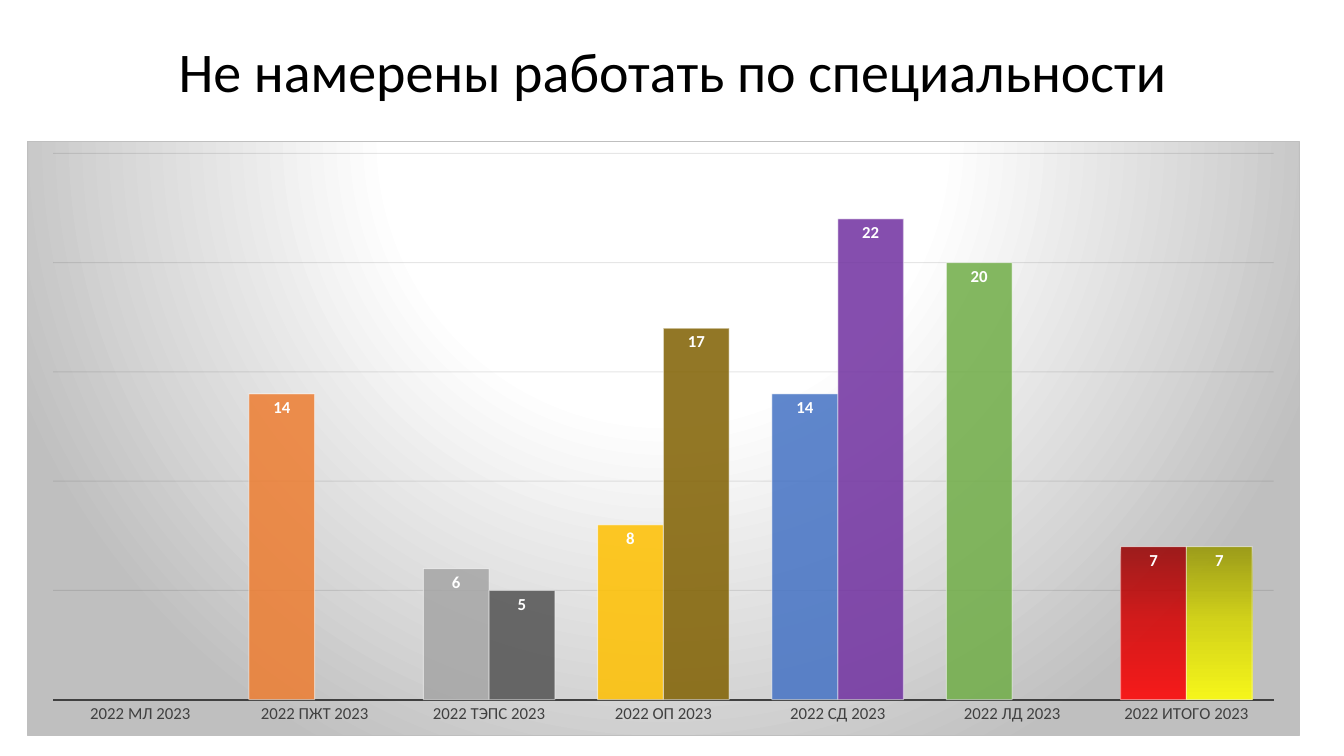
from lxml import etree
from pptx import Presentation
from pptx.chart.data import CategoryChartData
from pptx.dml.color import RGBColor
from pptx.enum.chart import XL_CHART_TYPE, XL_LABEL_POSITION, XL_TICK_LABEL_POSITION, XL_TICK_MARK
from pptx.enum.text import MSO_ANCHOR, PP_ALIGN
from pptx.util import Inches, Pt

CLUSTERED = XL_CHART_TYPE.COLUMN_CLUSTERED
INSIDE_END = XL_LABEL_POSITION.INSIDE_END
NO_LABELS = XL_TICK_LABEL_POSITION.NONE
NO_TICKS = XL_TICK_MARK.NONE
BOTTOM = MSO_ANCHOR.BOTTOM
CENTER = PP_ALIGN.CENTER

BLACK = RGBColor(0x00, 0x00, 0x00)
WHITE = RGBColor(0xFF, 0xFF, 0xFF)
SILVER = RGBColor(0xBF, 0xBF, 0xBF)
AXIS_GRAY = RGBColor(0x40, 0x40, 0x40)
GRID_GRAY = RGBColor(0x0D, 0x0D, 0x0D)
SKY = RGBColor(0x5B, 0x9B, 0xD5)
ORANGE = RGBColor(0xED, 0x7D, 0x31)
GRAY = RGBColor(0xA5, 0xA5, 0xA5)
GOLD = RGBColor(0xFF, 0xC0, 0x00)
BLUE = RGBColor(0x44, 0x72, 0xC4)
GREEN = RGBColor(0x70, 0xAD, 0x47)
DARK_GRAY = RGBColor(0x52, 0x52, 0x52)
BROWN = RGBColor(0x80, 0x60, 0x00)
PURPLE = RGBColor(0x70, 0x30, 0xA0)
REDS = [RGBColor(0x97, 0x00, 0x00), RGBColor(0xD7, 0x00, 0x00), RGBColor(0xFF, 0x00, 0x00)]
YELLOWS = [RGBColor(0x97, 0x97, 0x00), RGBColor(0xD7, 0xD7, 0x00), RGBColor(0xFF, 0xFF, 0x00)]

FONT = "Calibri"
A = "http://schemas.openxmlformats.org/drawingml/2006/main"
C = "http://schemas.openxmlformats.org/drawingml/2006/chart"


def color_xml(color, alpha=100):
    return f'<a:srgbClr val="{color}"><a:alpha val="{alpha * 1000}"/></a:srgbClr>'


def paint(properties, colors, stops, direction, alpha, line_color, line_alpha):
    if len(colors) == 1:
        fill = f"<a:solidFill>{color_xml(colors[0], alpha)}</a:solidFill>"
    else:
        stop_list = "".join(
            f'<a:gs pos="{stop * 1000}">{color_xml(color, alpha)}</a:gs>'
            for stop, color in zip(stops, colors)
        )
        fill = f"<a:gradFill><a:gsLst>{stop_list}</a:gsLst>{direction}</a:gradFill>"
    line = f'<a:ln w="9525"><a:solidFill>{color_xml(line_color, line_alpha)}</a:solidFill></a:ln>'
    properties.extend(etree.fromstring(f'<root xmlns:a="{A}">{fill}{line}</root>'))


presentation = Presentation()
presentation.slide_width = Inches(13.33)
presentation.slide_height = Inches(7.5)
slide = presentation.slides.add_slide(presentation.slide_layouts[6])

title = slide.shapes.add_textbox(Inches(1.67), Inches(0.31), Inches(10), Inches(0.78))
title.text_frame.word_wrap = True
title.text_frame.vertical_anchor = BOTTOM
paragraph = title.text_frame.paragraphs[0]
paragraph.text = "Не намерены работать по специальности"
paragraph.alignment = CENTER
paragraph.line_spacing = 0.9
paragraph.font.name = FONT
paragraph.font.size = Pt(40)
paragraph.font.color.rgb = BLACK

data = CategoryChartData()
data.categories = [f"2022 {group} 2023" for group in ("МЛ", "ПЖТ", "ТЭПС", "ОП", "СД", "ЛД", "ИТОГО")]
data.add_series("2022", [None, 14, 6, 8, 14, 20, 7])
data.add_series("2023", [None, None, 5, 17, 22, None, 7])
chart = slide.shapes.add_chart(
    CLUSTERED, Inches(0.27), Inches(1.4), Inches(12.62), Inches(5.9), data
).chart
chart.has_legend = False
chart.has_title = False
chart.font.name = FONT
chart.font.size = Pt(10)
chart.font.color.rgb = BLACK

category_axis = chart.category_axis
category_axis.major_tick_mark = NO_TICKS
category_axis.tick_labels.font.name = FONT
category_axis.tick_labels.font.size = Pt(12)
category_axis.tick_labels.font.color.rgb = AXIS_GRAY
category_axis.format.line.color.rgb = AXIS_GRAY
category_axis.format.line.width = Pt(1.5)

value_axis = chart.value_axis
value_axis.minimum_scale = 0
value_axis.maximum_scale = 25
value_axis.major_unit = 5
value_axis.major_tick_mark = NO_TICKS
value_axis.tick_label_position = NO_LABELS
value_axis.format.line.fill.background()
grid_line = value_axis.major_gridlines.format.line
grid_line.color.rgb = GRID_GRAY
grid_line.width = Pt(0.75)
for grid_color in value_axis._element.iter(f"{{{A}}}srgbClr"):
    if grid_color.get("val") == str(GRID_GRAY):
        etree.SubElement(grid_color, f"{{{A}}}alpha", val="10000")

plot = chart.plots[0]
plot.vary_by_categories = False
plot.gap_width = 65
plot.overlap = 0
bar_colors = [
    [[SKY], {1: [ORANGE], 2: [GRAY], 3: [GOLD], 4: [BLUE], 5: [GREEN], 6: REDS}],
    [[ORANGE], {2: [DARK_GRAY], 3: [BROWN], 4: [PURPLE], 6: YELLOWS}],
]
for series, (series_colors, point_colors) in zip(plot.series, bar_colors):
    series.invert_if_negative = False
    targets = [(series._element.get_or_add_spPr(), series_colors)]
    for index, colors in point_colors.items():
        point = series._element.get_or_add_dPt_for_point(index)
        targets.append((point.get_or_add_spPr(), colors))
    for properties, colors in targets:
        paint(properties, colors, (0, 50, 100), '<a:lin ang="5400000" scaled="0"/>', 85, WHITE, 50)
    labels = series.data_labels
    labels.show_value = True
    labels.position = INSIDE_END
    labels.font.name = FONT
    labels.font.size = Pt(12)
    labels.font.bold = True
    labels.font.color.rgb = WHITE

chart_space = chart._chartSpace
background = etree.Element(f"{{{C}}}spPr")
circle = '<a:path path="circle"><a:fillToRect l="50000" t="-80000" r="50000" b="180000"/></a:path>'
paint(background, [WHITE, WHITE, SILVER], (0, 39, 100), circle, 100, SILVER, 100)
chart_space.find(f"{{{C}}}chart").addnext(background)

plot_area = chart_space.find(f".//{{{C}}}plotArea")
for old_layout in plot_area.findall(f"{{{C}}}layout"):
    plot_area.remove(old_layout)
layout = etree.Element(f"{{{C}}}layout")
manual = etree.SubElement(layout, f"{{{C}}}manualLayout")
for tag, value in (
    ("layoutTarget", "inner"), ("xMode", "edge"), ("yMode", "edge"),
    ("x", "0.02"), ("y", "0.02"), ("w", "0.96"), ("h", "0.92"),
):
    etree.SubElement(manual, f"{{{C}}}{tag}", val=value)
plot_area.insert(0, layout)

presentation.save("out.pptx")
